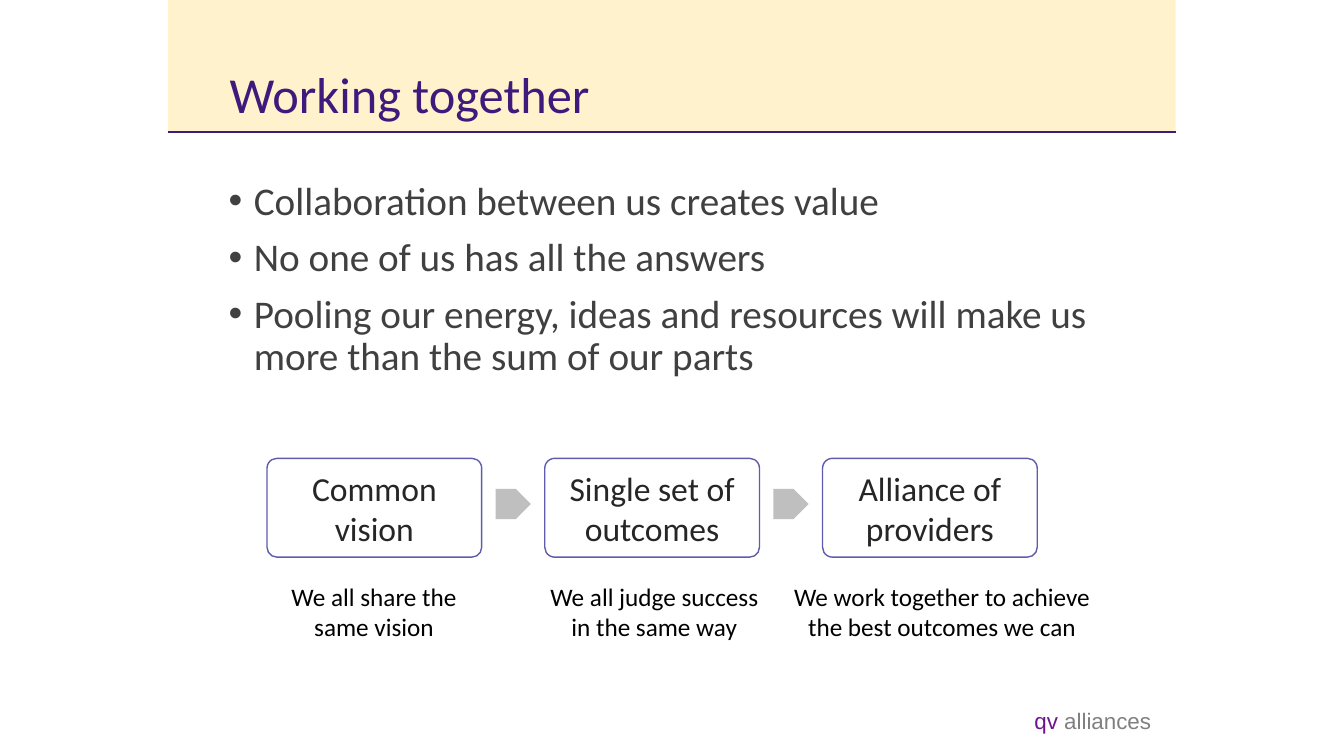
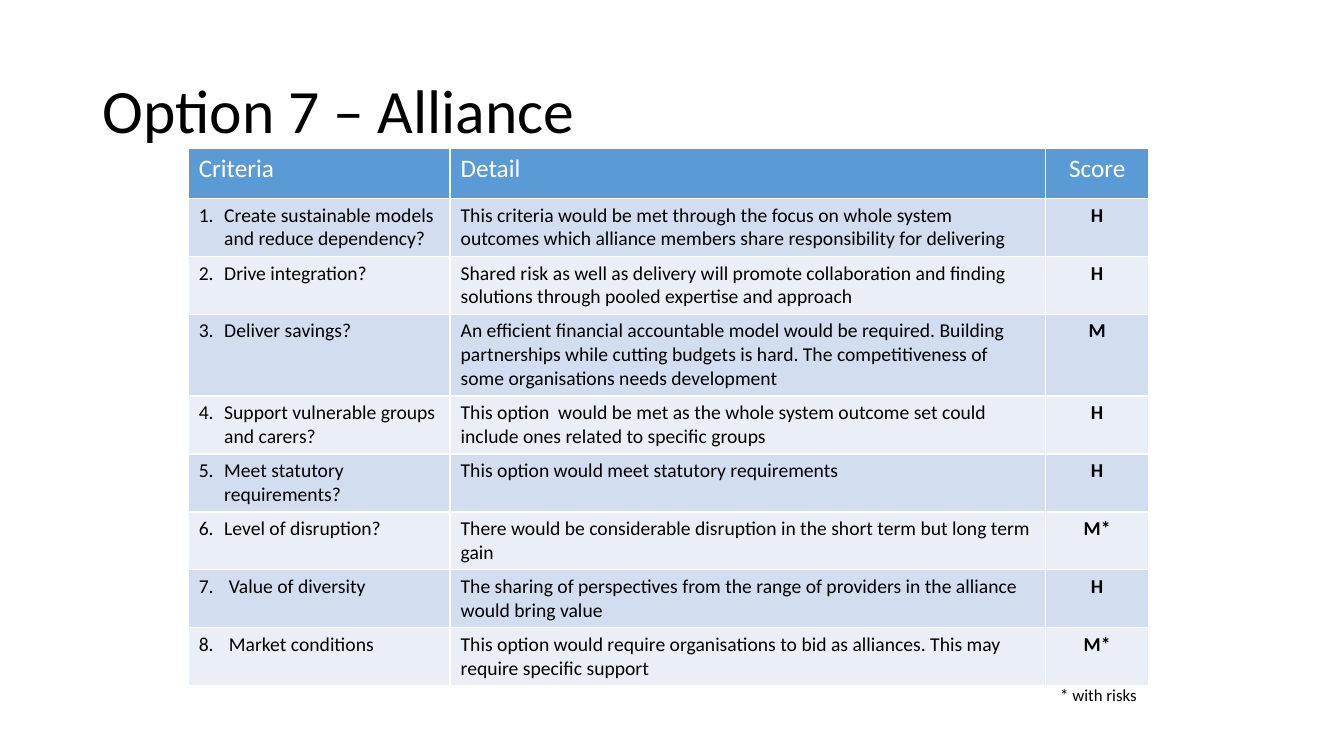
from lxml import etree
from pptx import Presentation
from pptx.dml.color import RGBColor
from pptx.enum.shapes import MSO_CONNECTOR, MSO_SHAPE
from pptx.enum.text import MSO_ANCHOR, PP_ALIGN
from pptx.oxml.ns import qn
from pptx.util import Cm, Pt

RECTANGLE = MSO_SHAPE.RECTANGLE
ROUNDED = MSO_SHAPE.ROUNDED_RECTANGLE
HOME_PLATE = MSO_SHAPE.PENTAGON
STRAIGHT = MSO_CONNECTOR.STRAIGHT
LEFT, CENTER, RIGHT = PP_ALIGN.LEFT, PP_ALIGN.CENTER, PP_ALIGN.RIGHT
TOP, MIDDLE, BOTTOM = MSO_ANCHOR.TOP, MSO_ANCHOR.MIDDLE, MSO_ANCHOR.BOTTOM

BLACK = RGBColor(0x00, 0x00, 0x00)
WHITE = RGBColor(0xFF, 0xFF, 0xFF)
CREAM = RGBColor(0xFF, 0xF2, 0xCC)
PURPLE = RGBColor(0x3D, 0x1A, 0x7B)
VIOLET = RGBColor(0x5F, 0x5B, 0xAE)
BRAND_PURPLE = RGBColor(0x6C, 0x13, 0x8F)
DARK_GREY = RGBColor(0x40, 0x40, 0x40)
CHARCOAL = RGBColor(0x26, 0x26, 0x26)
MID_GREY = RGBColor(0x80, 0x80, 0x80)
LIGHT_GREY = RGBColor(0xBF, 0xBF, 0xBF)
HEADER_BLUE = RGBColor(0x5B, 0x9B, 0xD5)
BAND_COLORS = [RGBColor(0xD2, 0xDE, 0xEF), RGBColor(0xEA, 0xEF, 0xF7)]

BODY_FONT = "Calibri"
FOOTER_FONT = "Arial"
TITLE_SPACING = 0.9
HANGING = 0.64


def write_text(frame, text, size=18, color=BLACK, font=BODY_FONT, bold=False,
               align=LEFT, anchor=TOP, line_spacing=None, before=0, after=0,
               bullet=None, number=None, hanging=HANGING):
    """Fill a text frame, one paragraph per line, and return the last paragraph."""
    frame.word_wrap = True
    frame.vertical_anchor = anchor
    for index, line in enumerate(text.split("\n")):
        paragraph = frame.add_paragraph() if index else frame.paragraphs[0]
        paragraph.alignment = align
        paragraph.line_spacing = line_spacing
        paragraph.space_before, paragraph.space_after = Pt(before), Pt(after)
        run = paragraph.add_run()
        run.text = line
        run.font.name, run.font.size, run.font.bold = font, Pt(size), bold
        run.font.color.rgb = color
        if bullet or number:
            properties = paragraph._p.get_or_add_pPr()
            properties.set("marL", str(Cm(hanging)))
            properties.set("indent", str(-Cm(hanging)))
            if bullet:
                etree.SubElement(properties, qn("a:buFont"), typeface="Arial")
                etree.SubElement(properties, qn("a:buChar"), char=bullet)
            else:
                etree.SubElement(properties, qn("a:buAutoNum"),
                                 type="arabicPeriod", startAt=str(number))
    return paragraph


def add_plain_shape(slide, kind, left, top, width, height, fill=None, line=None):
    """Add a shape without shadow; sizes in cm, no fill or line unless given."""
    shape = slide.shapes.add_shape(kind, Cm(left), Cm(top), Cm(width), Cm(height))
    shape.shadow.inherit = False
    if fill:
        shape.fill.solid()
        shape.fill.fore_color.rgb = fill
    else:
        shape.fill.background()
    if line:
        shape.line.color.rgb = line
        shape.line.width = Pt(1)
    else:
        shape.line.fill.background()
    return shape


presentation = Presentation()
presentation.slide_width, presentation.slide_height = Cm(33.87), Cm(19.05)
blank_layout = presentation.slide_layouts[6]

# Working together
slide = presentation.slides.add_slide(blank_layout)
BAND_LEFT, BAND_WIDTH, BAND_HEIGHT = 4.23, 25.4, 3.33
add_plain_shape(slide, RECTANGLE, BAND_LEFT, 0, BAND_WIDTH, BAND_HEIGHT, fill=CREAM)

title = slide.shapes.add_textbox(Cm(5.54), Cm(0.53), Cm(22.8), Cm(2.8))
title.text_frame.margin_bottom = Cm(0.2)
write_text(title.text_frame, "Working together", size=36, color=PURPLE,
           anchor=BOTTOM, line_spacing=TITLE_SPACING, after=6)

body = slide.shapes.add_textbox(Cm(5.51), Cm(4.45), Cm(22.86), Cm(5.87))
write_text(body.text_frame,
           "Collaboration between us creates value\n"
           "No one of us has all the answers\n"
           "Pooling our energy, ideas and resources will make us more than the sum of our parts",
           size=28, color=DARK_GREY, line_spacing=0.9, before=10, bullet="•")

rule = slide.shapes.add_connector(STRAIGHT, Cm(BAND_LEFT), Cm(BAND_HEIGHT),
                                  Cm(BAND_LEFT + BAND_WIDTH), Cm(BAND_HEIGHT))
rule.line.color.rgb = PURPLE
rule.line.width = Pt(1)
etree.SubElement(rule._element.spPr, qn("a:effectLst"))

BOX_LEFT, BOX_TOP, BOX_WIDTH, BOX_HEIGHT, BOX_PITCH = 6.73, 11.55, 5.41, 2.49, 7.0
ARROW_WIDTH, ARROW_HEIGHT = 0.89, 0.76
steps = [
    # label, caption, caption left, caption width
    ("Common vision", "We all share the same vision", 6.91, 5.03),
    ("Single set of outcomes", "We all judge success in the same way", 13.44, 6.1),
    ("Alliance of providers", "We work together to achieve the best outcomes we can", 19.74, 8.0),
]
for index, (label, caption, caption_left, caption_width) in enumerate(steps):
    left = BOX_LEFT + index * BOX_PITCH
    box = add_plain_shape(slide, ROUNDED, left, BOX_TOP, BOX_WIDTH, BOX_HEIGHT, line=VIOLET)
    box.adjustments[0] = 0.1
    write_text(box.text_frame, label, size=24, color=CHARCOAL, align=CENTER, anchor=MIDDLE)
    caption_box = slide.shapes.add_textbox(Cm(caption_left), Cm(14.53),
                                           Cm(caption_width), Cm(1.8))
    write_text(caption_box.text_frame, caption, align=CENTER)
    if index:
        arrow_left = left - (BOX_PITCH - BOX_WIDTH + ARROW_WIDTH) / 2
        add_plain_shape(slide, HOME_PLATE, arrow_left, 12.32, ARROW_WIDTH, ARROW_HEIGHT,
                        fill=LIGHT_GREY)

footer = slide.shapes.add_textbox(Cm(22.33), Cm(17.7), Cm(6.93), Cm(0.94))
footer_paragraph = write_text(footer.text_frame, "qv ", size=16, color=BRAND_PURPLE,
                              font=FOOTER_FONT, align=RIGHT)
footer_name = footer_paragraph.add_run()
footer_name.text = "alliances"
footer_name.font.name, footer_name.font.size = FOOTER_FONT, Pt(16)
footer_name.font.color.rgb = MID_GREY

# Option 7 – Alliance
slide = presentation.slides.add_slide(blank_layout)
title = slide.shapes.add_textbox(Cm(2.33), Cm(1.02), Cm(29.21), Cm(3.68))
write_text(title.text_frame, "Option 7 – Alliance", size=44, anchor=MIDDLE,
           line_spacing=TITLE_SPACING)

HEADINGS = ("Criteria", "Detail", "Score")
COLUMN_WIDTHS = (6.6, 15.01, 2.6)
HEADER_HEIGHT, TWO_LINES, THREE_LINES = 1.27, 1.46, 2.06
criteria = [
    # criterion, detail, score, row height, hanging indent
    ("Create sustainable models and reduce dependency?",
     "This criteria would be met through the focus on whole system outcomes which "
     "alliance members share responsibility for delivering", "H", TWO_LINES, HANGING),
    ("Drive integration?",
     "Shared risk as well as delivery will promote collaboration and finding solutions "
     "through pooled expertise and approach", "H", TWO_LINES, HANGING),
    ("Deliver savings?",
     "An efficient financial accountable model would be required. Building partnerships "
     "while cutting budgets is hard. The competitiveness of some organisations needs "
     "development", "M", THREE_LINES, HANGING),
    ("Support vulnerable groups and carers?",
     "This option  would be met as the whole system outcome set could include ones "
     "related to specific groups", "H", TWO_LINES, HANGING),
    ("Meet statutory requirements?",
     "This option would meet statutory requirements", "H", TWO_LINES, HANGING),
    ("Level of disruption?",
     "There would be considerable disruption in the short term but long term gain",
     "M*", TWO_LINES, HANGING),
    ("Value of diversity",
     "The sharing of perspectives from the range of providers in the alliance would "
     "bring value", "H", TWO_LINES, 0.76),
    ("Market conditions",
     "This option would require organisations to bid as alliances. This may require "
     "specific support", "M*", TWO_LINES, 0.76),
]
row_heights = [HEADER_HEIGHT] + [height for _, _, _, height, _ in criteria]
table = slide.shapes.add_table(len(row_heights), len(HEADINGS), Cm(4.74), Cm(3.73),
                               Cm(sum(COLUMN_WIDTHS)), Cm(sum(row_heights))).table
for column, width in zip(table.columns, COLUMN_WIDTHS):
    column.width = Cm(width)
for row, height in zip(table.rows, row_heights):
    row.height = Cm(height)

for column_index, heading in enumerate(HEADINGS):
    write_text(table.cell(0, column_index).text_frame, heading, color=WHITE,
               align=CENTER if heading == "Score" else LEFT)
for number, (criterion, detail, score, _, hanging) in enumerate(criteria, start=1):
    criterion_cell, detail_cell, score_cell = table.rows[number].cells
    write_text(criterion_cell.text_frame, criterion, size=14, number=number, hanging=hanging)
    write_text(detail_cell.text_frame, detail, size=14)
    write_text(score_cell.text_frame, score, size=14, bold=True, align=CENTER)

for row_index, row in enumerate(table.rows):
    for cell in row.cells:
        cell.margin_left = cell.margin_right = Cm(0.27)
        cell.fill.solid()
        cell.fill.fore_color.rgb = BAND_COLORS[(row_index - 1) % 2] if row_index else HEADER_BLUE

footnote = slide.shapes.add_textbox(Cm(26.47), Cm(17.12), Cm(2.64), Cm(0.76))
write_text(footnote.text_frame, "* with risks", size=12)

presentation.save("out.pptx")
